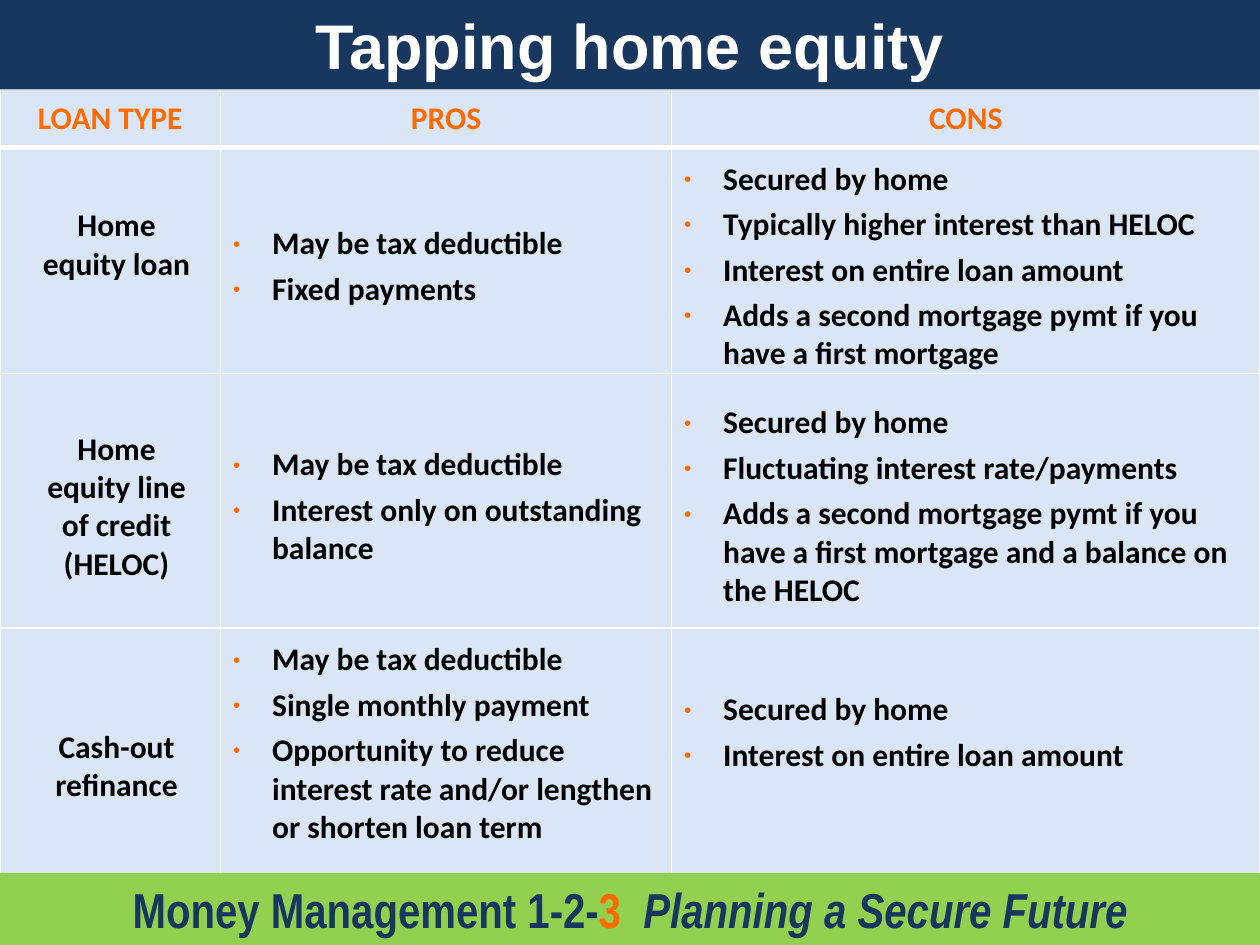
from dataclasses import dataclass

from lxml import etree
from pptx import Presentation
from pptx.dml.color import RGBColor
from pptx.enum.shapes import MSO_SHAPE
from pptx.enum.text import MSO_ANCHOR, PP_ALIGN
from pptx.oxml.ns import qn
from pptx.util import Inches, Pt

RECT = MSO_SHAPE.RECTANGLE
CENTER, LEFT = PP_ALIGN.CENTER, PP_ALIGN.LEFT
TOP, MIDDLE = MSO_ANCHOR.TOP, MSO_ANCHOR.MIDDLE

NAVY, ORANGE, GREEN = "17375E", "FF6B00", "92D050"
PALE_BLUE, WHITE, BLACK = "C6D9F1", "FFFFFF", "000000"

COLUMN_WIDTHS = (1.75, 3.58, 4.67)
ROW_HEIGHTS = (0.46, 1.79, 2.02, 2.1)
HEADINGS = ("LOAN TYPE", "PROS", "CONS")
HEADING_INSETS = (0.1, 0.05, 0.1, 0.05)
BODY_INSETS = (0.1, 0.1, 0.1, 0)


@dataclass
class Loan:
    name: str
    pros: list[str]
    cons: list[str]
    name_insets: tuple = (0.3, 0.1, 0.2, 0)
    pros_insets: tuple = BODY_INSETS
    cons_insets: tuple = BODY_INSETS
    cons_anchor: MSO_ANCHOR = MIDDLE


LOANS = [
    Loan("Home equity loan",
         ["May be tax deductible", "Fixed payments"],
         ["Secured by home", "Typically higher interest than HELOC",
          "Interest on entire loan amount",
          "Adds a second mortgage pymt if you have a first mortgage"],
         name_insets=(0.3, 0.1, 0.2, 0.34)),
    Loan("Home equity line of credit (HELOC)",
         ["May be tax deductible",
          "Interest only on outstanding balance"],
         ["Secured by home", "Fluctuating interest rate/payments",
          "Adds a second mortgage pymt if you have a first mortgage "
          "and a balance on the HELOC"]),
    Loan("Cash-out refinance",
         ["May be tax deductible", "Single monthly payment",
          "Opportunity to reduce interest rate and/or lengthen "
          "or shorten loan term"],
         ["Secured by home", "Interest on entire loan amount"],
         pros_insets=(0.1, 0.1, 0.1, 0.36),
         cons_insets=(0.1, 0.5, 0.1, 0), cons_anchor=TOP),
]


def rgb(color: str) -> RGBColor:
    return RGBColor.from_string(color)


def style_run(r, font: str, size: float, color: str, italic=False) -> None:
    r.font.name, r.font.size = font, Pt(size)
    r.font.bold, r.font.italic = True, italic
    r.font.color.rgb = rgb(color)


def add_bullet(p) -> None:
    pPr = p._p.get_or_add_pPr()
    pPr.set("marL", str(Inches(0.31)))
    pPr.set("indent", str(-Inches(0.31)))
    clr = etree.SubElement(pPr, qn("a:buClr"))
    etree.SubElement(clr, qn("a:srgbClr"), val=ORANGE)
    etree.SubElement(pPr, qn("a:buSzPct"), val="65000")
    etree.SubElement(pPr, qn("a:buFont"), typeface="Arial")
    etree.SubElement(pPr, qn("a:buChar"), char="•")


def style_cell(cell, below_header: bool, is_header: bool) -> None:
    """Give the cell its translucent fill and white borders."""
    cell.fill.solid()
    cell.fill.fore_color.rgb = rgb(PALE_BLUE)
    tcPr = cell._tc.get_or_add_tcPr()
    fill_color = tcPr.find(qn("a:solidFill")).find(qn("a:srgbClr"))
    etree.SubElement(fill_color, qn("a:alpha"), val="64000")
    widths = {"L": 1, "R": 1, "T": 3 if below_header else 1,
              "B": 3 if is_header else 1}
    for i, (side, width) in enumerate(widths.items()):
        ln = etree.Element(qn(f"a:ln{side}"), w=str(Pt(width)))
        solid = etree.SubElement(ln, qn("a:solidFill"))
        etree.SubElement(solid, qn("a:srgbClr"), val=WHITE)
        tcPr.insert(i, ln)


def write_cell(cell, lines: list[str], insets: tuple, color=BLACK,
               bulleted=False, anchor=MIDDLE) -> None:
    (cell.margin_left, cell.margin_top,
     cell.margin_right, cell.margin_bottom) = map(Inches, insets)
    cell.vertical_anchor = anchor
    tf = cell.text_frame
    tf.text = "\n".join(lines)
    for i, p in enumerate(tf.paragraphs):
        if bulleted:
            add_bullet(p)
        p.alignment = LEFT if bulleted else CENTER
        p.space_before = Pt(2 if i else 0)
        p.space_after = Pt(2)
        style_run(p.runs[0], "Calibri", 18, color)


def add_loan_table(slide) -> None:
    frame = slide.shapes.add_table(
        len(ROW_HEIGHTS), len(COLUMN_WIDTHS), Inches(0), Inches(0.71),
        Inches(sum(COLUMN_WIDTHS)), Inches(sum(ROW_HEIGHTS)))
    table = frame.table
    table.horz_banding = False
    for column, width in zip(table.columns, COLUMN_WIDTHS):
        column.width = Inches(width)
    for i, (row, height) in enumerate(zip(table.rows, ROW_HEIGHTS)):
        row.height = Inches(height)
        for cell in row.cells:
            style_cell(cell, below_header=i == 1, is_header=i == 0)
    for j, heading in enumerate(HEADINGS):
        write_cell(table.cell(0, j), [heading], HEADING_INSETS, ORANGE)
    for i, loan in enumerate(LOANS, 1):
        write_cell(table.cell(i, 0), [loan.name], loan.name_insets)
        write_cell(table.cell(i, 1), loan.pros, loan.pros_insets,
                   bulleted=True)
        write_cell(table.cell(i, 2), loan.cons, loan.cons_insets,
                   bulleted=True, anchor=loan.cons_anchor)


def add_band(slide, top: float, height: float, color: str, anchor):
    """Add a full-width bar and return its centred first paragraph."""
    sp = slide.shapes.add_shape(RECT, Inches(0), Inches(top),
                                Inches(10), Inches(height))
    sp.shadow.inherit = False
    sp.fill.solid()
    sp.fill.fore_color.rgb = rgb(color)
    sp.line.fill.background()
    tf = sp.text_frame
    tf.word_wrap = True
    tf.vertical_anchor = anchor
    p = tf.paragraphs[0]
    p.alignment = CENTER
    return p


def add_footer(slide) -> None:
    p = add_band(slide, 6.93, 0.57, GREEN, TOP)
    for text, color, italic in (("Money Management 1-2-", NAVY, False),
                                ("3", ORANGE, False),
                                (" ", ORANGE, False),
                                ("Planning a Secure Future", NAVY, True)):
        r = p.add_run()
        r.text = text
        style_run(r, "Arial Narrow", 28, color, italic)
    gap = p.runs[2]
    gap.font._element.set("spc", "640")


def add_title(slide) -> None:
    p = add_band(slide, 0, 0.71, NAVY, MIDDLE)
    p.text = "Tapping home equity"
    style_run(p.runs[0], "Arial", 36, WHITE)


def main() -> None:
    prs = Presentation()
    prs.slide_width, prs.slide_height = Inches(10), Inches(7.5)
    slide = prs.slides.add_slide(prs.slide_layouts[6])
    add_loan_table(slide)
    add_footer(slide)
    add_title(slide)
    prs.save("out.pptx")


if __name__ == "__main__":
    main()
